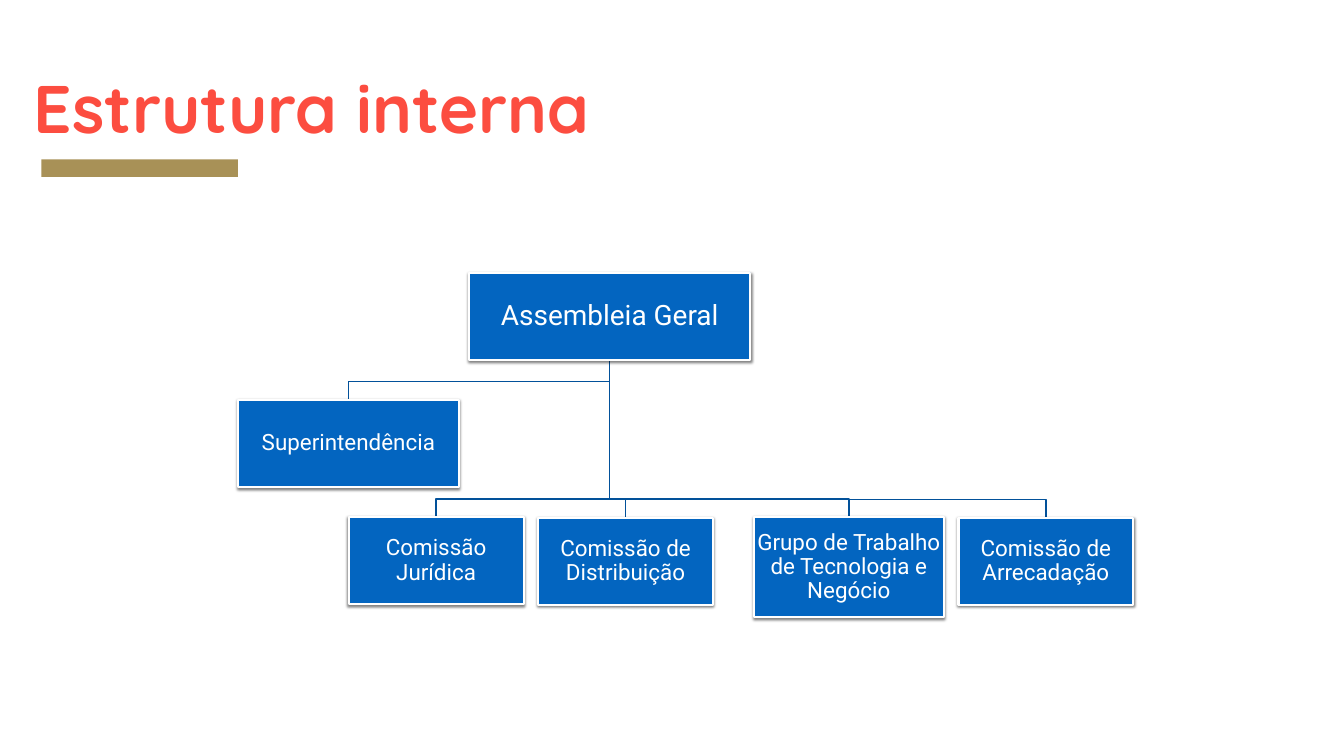
import pptx
import pptx.util
from lxml import etree
from pptx.dml.color import RGBColor
from pptx.enum.shapes import MSO_SHAPE
from pptx.enum.text import MSO_ANCHOR, MSO_AUTO_SIZE, PP_ALIGN
from pptx.oxml.ns import qn
from pptx.util import Inches, Pt

TITLE = "Estrutura interna"
RED, GOLD, BLUE, NAVY, WHITE = "FC4D40", "A89157", "0365C0", "02519A", "FFFFFF"

# text, left, top, width, height, text size
ROOT = ("Assembleia Geral", 9.31, 5.41, 5.58, 1.73, 40)
UNITS = [
    ("Superintendência", 4.72, 7.93, 4.39, 1.73, 32),
    ("Comissão Jurídica", 6.92, 10.26, 3.47, 1.73, 32),
    ("Comissão de Distribuição", 10.68, 10.27, 3.47, 1.73, 32),
    ("Grupo de Trabalho de Tecnologia e Negócio", 14.96, 10.26, 3.77, 1.98, 32),
    ("Comissão de Arrecadação", 19.02, 10.27, 3.47, 1.73, 32),
]
BEND = 0.36  # height of the last leg of a link above its box


def paint(fmt, color):
    fmt.solid()
    fmt.fore_color.rgb = RGBColor.from_string(color)


def set_text(sp, text, font, size, color, inset, spacing, align, bold=False):
    tf = sp.text_frame
    tf.word_wrap = True
    tf.auto_size = MSO_AUTO_SIZE.NONE
    tf.vertical_anchor = MSO_ANCHOR.MIDDLE
    tf.margin_left = tf.margin_right = Inches(inset)
    tf.margin_top = tf.margin_bottom = Inches(inset)
    tf.text = text
    p = tf.paragraphs[0]
    p.alignment, p.line_spacing = align, spacing
    p.font.name, p.font.size, p.font.bold = font, Pt(size), bold
    p.font.color.rgb = RGBColor.from_string(color)


def add_rect(s, left, top, width, height, color):
    sp = s.shapes.add_shape(MSO_SHAPE.RECTANGLE, Inches(left), Inches(top),
                            Inches(width), Inches(height))
    sp.shadow.inherit = False
    paint(sp.fill, color)
    sp.line.fill.background()
    return sp


def drop_shadow(sp):
    effects = sp.element.spPr.find(qn("a:effectLst"))
    shadow = etree.SubElement(effects, qn("a:outerShdw"), blurRad=str(Pt(4)),
                              dist=str(Pt(2)), dir="5400000", rotWithShape="0")
    color = etree.SubElement(shadow, qn("a:srgbClr"), val="000000")
    etree.SubElement(color, qn("a:alpha"), val="50000")


def add_box(s, text, left, top, width, height, size):
    sp = add_rect(s, left, top, width, height, BLUE)
    paint(sp.line.fill, WHITE)
    sp.line.width = Pt(3)
    drop_shadow(sp)
    set_text(sp, text, "Roboto", size, WHITE, 0.02, 0.9, PP_ALIGN.CENTER)


def add_link(s, parent, child):
    """Draw an elbow from the parent's bottom centre to the child's top centre."""
    x1, y1 = parent[1] + parent[3] / 2, parent[2] + parent[4]
    x2, y2 = child[1] + child[3] / 2, child[2]
    points = [(x1, y1), (x1, y2 - BEND), (x2, y2 - BEND), (x2, y2)]
    points = [(Inches(x), Inches(y)) for x, y in points]
    builder = s.shapes.build_freeform(*points[0])
    builder.add_line_segments(points[1:], close=False)
    sp = builder.convert_to_shape()
    sp.shadow.inherit = False
    sp.fill.background()
    paint(sp.line.fill, NAVY)
    sp.line.width = Pt(2)


def main():
    prs = pptx.Presentation()
    prs.slide_width, prs.slide_height = Inches(26.67), Inches(15)
    s = prs.slides.add_slide(prs.slide_layouts[5])

    add_rect(s, 0.82, 3.16, 3.9, 0.35, GOLD)
    title = s.shapes.title
    title.left, title.top = Inches(0.59), Inches(1.53)
    title.width, title.height = Inches(13.41), Inches(1.45)
    set_text(title, TITLE, "Quicksand", 96, RED, 0.08, 0.8, PP_ALIGN.LEFT, bold=True)
    title.text_frame.paragraphs[0].space_before = Pt(12)

    for unit in reversed(UNITS):
        add_link(s, ROOT, unit)
    for box in [ROOT] + UNITS:
        add_box(s, *box)
    prs.save("out.pptx")


if __name__ == "__main__":
    main()
